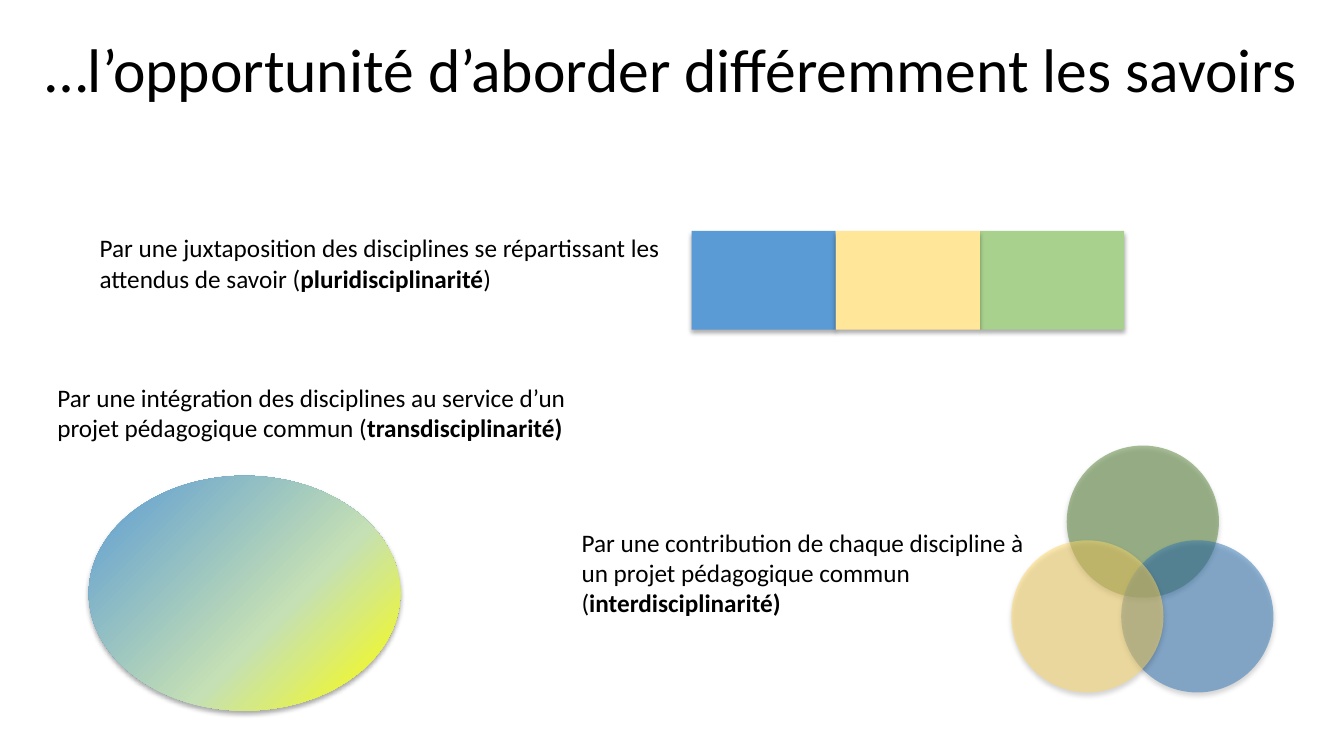
from dataclasses import dataclass

from pptx import Presentation
from pptx.dml.color import RGBColor
from pptx.enum.shapes import MSO_SHAPE
from pptx.enum.text import MSO_ANCHOR, MSO_AUTO_SIZE, PP_ALIGN
from pptx.oxml import parse_xml
from pptx.oxml.ns import nsdecls
from pptx.oxml.xmlchemy import OxmlElement
from pptx.util import Inches, Pt


@dataclass(frozen=True)
class Theme:
    """Colours, font and type sizes of the slide."""

    font: str = "Calibri"
    title_size: int = 44
    body_size: int = 18
    text: str = "000000"
    shadow: str = "000000"
    bands: tuple = ("5B9BD5", "FFE699", "A9D18E")
    circles: tuple = ("548235", "2E75B6", "FFD966")
    blend: tuple = ((0, "5B9BD5"), (61, "C5E0B4"), (71, "D3E888"), (100, "FFFF00"))


THEME = Theme()


def format_run(run, size, bold=False):
    """Give a run the theme font and text colour."""
    run.font.name = THEME.font
    run.font.size = Pt(size)
    run.font.bold = bold
    run.font.color.rgb = RGBColor.from_string(THEME.text)


def place(shape, left, top, width, height):
    """Move and size a shape in inches."""
    shape.left, shape.top = Inches(left), Inches(top)
    shape.width, shape.height = Inches(width), Inches(height)


def set_title(slide, text):
    """Fill and format the title placeholder."""
    title = slide.shapes.title
    place(title, 0, 0.34, 13.33, 0.91)
    frame = title.text_frame
    frame.text = text
    frame.word_wrap = True
    frame.auto_size = MSO_AUTO_SIZE.NONE
    frame.vertical_anchor = MSO_ANCHOR.TOP
    paragraph = frame.paragraphs[0]
    paragraph.alignment = PP_ALIGN.CENTER
    paragraph.line_spacing = 0.9
    format_run(paragraph.runs[0], THEME.title_size)


def add_description(slide, box, *parts):
    """Add a wrapped text whose every second part is bold."""
    shape = slide.shapes.add_textbox(*map(Inches, box))
    frame = shape.text_frame
    frame.word_wrap = True
    frame.auto_size = MSO_AUTO_SIZE.SHAPE_TO_FIT_TEXT
    for index, part in enumerate(parts):
        run = frame.paragraphs[0].add_run()
        run.text = part
        format_run(run, THEME.body_size, bold=index % 2 == 1)


def add_shadow(shape):
    """Add a soft shadow below a shape."""
    shape.shadow.inherit = False
    effects = shape._element.spPr.find("{*}effectLst")
    effects.append(parse_xml(
        f'<a:outerShdw {nsdecls("a")} blurRad="{Pt(3.5)}" dist="{Pt(2.2)}" dir="5400000" '
        f'algn="ctr" rotWithShape="0"><a:srgbClr val="{THEME.shadow}">'
        '<a:alpha val="32000"/></a:srgbClr></a:outerShdw>'))


def add_figure(shapes, kind, box, color=None, opacity=100):
    """Add a borderless shape with a shadow and an optional solid fill."""
    shape = shapes.add_shape(kind, *map(Inches, box))
    shape.line.fill.background()
    add_shadow(shape)
    if color:
        shape.fill.solid()
        shape.fill.fore_color.rgb = RGBColor.from_string(color)
    if opacity < 100:
        alpha = OxmlElement("a:alpha")
        alpha.set("val", str(opacity * 1000))
        shape._element.spPr.find("{*}solidFill")[0].append(alpha)
    return shape


def add_bands(slide):
    """Add the row of adjoining rectangles."""
    group = slide.shapes.add_group_shape()
    width = 1.43
    for index in (0, 2, 1):
        box = (6.86 + index * width, 2.29, width, 0.98)
        add_figure(group.shapes, MSO_SHAPE.RECTANGLE, box, THEME.bands[index])


def add_overlapping_circles(slide):
    """Add the three translucent circles."""
    group = slide.shapes.add_group_shape()
    size = 1.51
    corners = ((10.58, 4.42), (11.12, 5.36), (10.03, 5.36))
    for corner, color in zip(corners, THEME.circles):
        add_figure(group.shapes, MSO_SHAPE.OVAL, (*corner, size, size), color, opacity=50)


def add_blended_ellipse(slide):
    """Add the ellipse whose colours merge diagonally."""
    ellipse = add_figure(slide.shapes, MSO_SHAPE.OVAL, (0.88, 4.72, 3.09, 2.33))
    stops = "".join(
        f'<a:gs pos="{position * 1000}"><a:srgbClr val="{color}"/></a:gs>'
        for position, color in THEME.blend)
    gradient = parse_xml(
        f'<a:gradFill {nsdecls("a")} rotWithShape="1"><a:gsLst>{stops}</a:gsLst>'
        '<a:lin ang="2700000" scaled="0"/></a:gradFill>')
    ellipse._element.spPr.find("{*}prstGeom").addnext(gradient)


def main():
    """Build and save the slide."""
    presentation = Presentation()
    presentation.slide_width = Inches(13.33)
    presentation.slide_height = Inches(7.5)
    slide = presentation.slides.add_slide(presentation.slide_layouts[5])

    set_title(slide, "…l’opportunité d’aborder différemment les savoirs")
    add_description(
        slide, (0.89, 2.26, 5.95, 0.71),
        "Par une juxtaposition des disciplines se répartissant les attendus de savoir (",
        "pluridisciplinarité", ")")
    add_description(
        slide, (0.47, 3.74, 5.25, 1.01),
        "Par une intégration des disciplines au service d’un projet pédagogique commun (",
        "transdisciplinarité)")
    add_description(
        slide, (5.67, 5.18, 4.84, 1.01),
        "Par une contribution de chaque discipline à un projet pédagogique commun (",
        "interdisciplinarité)")
    add_bands(slide)
    add_overlapping_circles(slide)
    add_blended_ellipse(slide)

    presentation.save("out.pptx")


if __name__ == "__main__":
    main()
